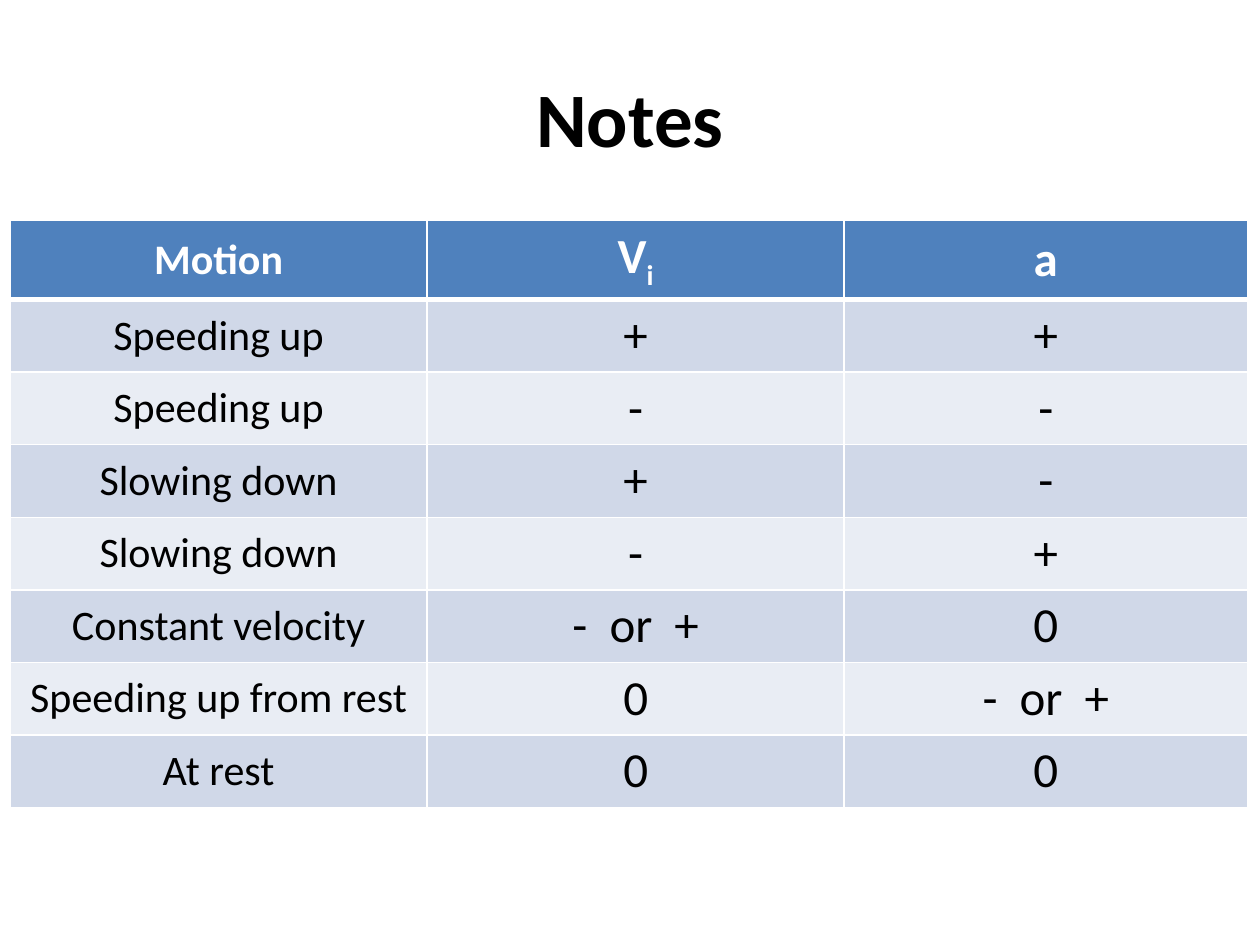
from pptx import Presentation
from pptx.dml.color import RGBColor as RGB
from pptx.enum.text import MSO_ANCHOR as Anchor, PP_ALIGN as Align
from pptx.oxml import parse_xml
from pptx.oxml.ns import nsdecls
from pptx.util import Inches, Pt

BLACK = RGB(0x00, 0x00, 0x00)
WHITE = RGB(0xFF, 0xFF, 0xFF)
BLUE = RGB(0x4F, 0x81, 0xBD)
BANDS = RGB(0xD0, 0xD8, 0xE8), RGB(0xE9, 0xED, 0xF4)

HEAD = ("Motion", "V", "a")
MOVES = [
    ("Speeding up", "+", "+"),
    ("Speeding up", "-", "-"),
    ("Slowing down", "+", "-"),
    ("Slowing down", "-", "+"),
    ("Constant velocity", "-  or  +", "0"),
    ("Speeding up from rest", "0", "-  or  +"),
    ("At rest", "0", "0"),
]
WIDTHS = (3.31, 3.31, 3.2)


class Deck:
    face = "Calibri"

    def __init__(self):
        self.file = Presentation()
        self.file.slide_width = Inches(10)
        self.file.slide_height = Inches(7.5)
        self.slide = self.file.slides.add_slide(self.file.slide_layouts[5])

    def style(self, para, size, color, bold):
        para.alignment = Align.CENTER
        font = para.font
        font.name = self.face
        font.size = Pt(size)
        font.bold = bold
        font.color.rgb = color

    def title(self, text, left, top, width, height):
        box = self.slide.shapes.title
        box.left, box.top = Inches(left), Inches(top)
        box.width, box.height = Inches(width), Inches(height)
        frame = box.text_frame
        frame.text = text
        frame.vertical_anchor = Anchor.MIDDLE
        self.style(frame.paragraphs[0], 44, BLACK, True)

    def border(self, cell, head):
        props = cell._tc.get_or_add_tcPr()
        for side in "LRTB":
            width = Pt(3 if head and side == "B" else 1)
            props.append(parse_xml(
                f'<a:ln{side} {nsdecls("a")} w="{width}"><a:solidFill>'
                f'<a:srgbClr val="{WHITE}"/></a:solidFill></a:ln{side}>'))

    def cell(self, cell, text, row, col):
        head = row == 0
        cell.text = text
        cell.vertical_anchor = Anchor.MIDDLE
        self.border(cell, head)
        cell.fill.solid()
        cell.fill.fore_color.rgb = BLUE if head else BANDS[(row - 1) % 2]
        self.style(cell.text_frame.paragraphs[0], 28 if col else 24,
                   WHITE if head else BLACK, head)

    def table(self, rows, widths, left, top):
        high = [0.61] + [0.57] * (len(rows) - 1)
        grid = self.slide.shapes.add_table(
            len(rows), len(widths), Inches(left), Inches(top),
            Inches(sum(widths)), Inches(sum(high))).table
        for col, width in zip(grid.columns, widths):
            col.width = Inches(width)
        for r, texts in enumerate(rows):
            grid.rows[r].height = Inches(high[r])
            for c, text in enumerate(texts):
                self.cell(grid.cell(r, c), text, r, c)
        return grid

    def sub(self, cell, text):
        run = cell.text_frame.paragraphs[0].add_run()
        run.text = text
        run._r.get_or_add_rPr().set("baseline", "-25000")


def main():
    deck = Deck()
    deck.title("Notes", 0.5, 0.3, 9, 1.25)
    grid = deck.table([HEAD] + MOVES, WIDTHS, 0.08, 1.75)
    deck.sub(grid.cell(0, 1), "i")
    deck.file.save("out.pptx")


if __name__ == "__main__":
    main()
